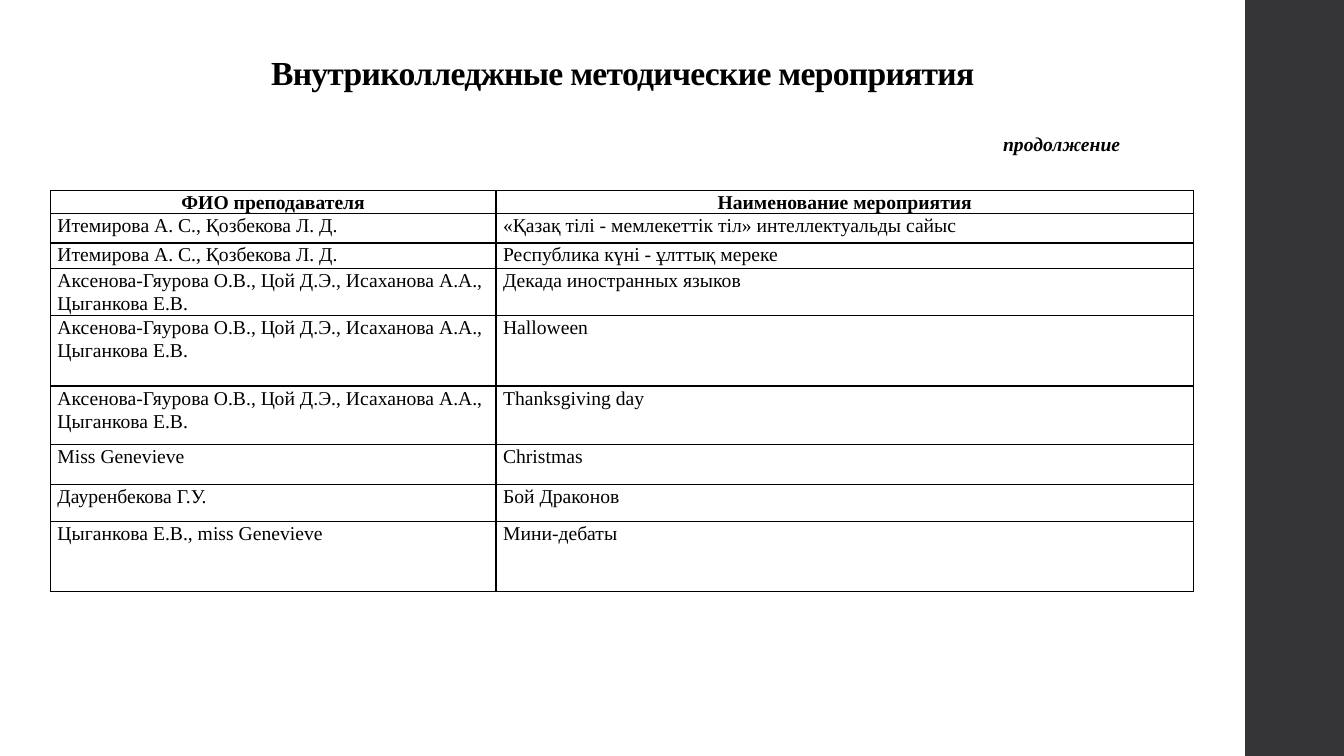
"""Builds the slide listing the college's methodical events and their teachers."""
from dataclasses import dataclass

from lxml import etree
from pptx import Presentation
from pptx.dml.color import RGBColor
from pptx.enum.shapes import MSO_SHAPE
from pptx.enum.text import MSO_ANCHOR, MSO_AUTO_SIZE, PP_ALIGN
from pptx.oxml.ns import qn
from pptx.slide import Slide
from pptx.table import _Cell
from pptx.text.text import TextFrame
from pptx.util import Inches, Pt

RECTANGLE = MSO_SHAPE.RECTANGLE
BOTTOM = MSO_ANCHOR.BOTTOM
GROW = MSO_AUTO_SIZE.SHAPE_TO_FIT_TEXT
NO_FIT = MSO_AUTO_SIZE.NONE
LEFT, CENTER = PP_ALIGN.LEFT, PP_ALIGN.CENTER


@dataclass(frozen=True)
class Theme:
    font: str = "Times New Roman"
    ink: RGBColor = RGBColor(0, 0, 0)
    paper: RGBColor = RGBColor(255, 255, 255)
    band: RGBColor = RGBColor(0x35, 0x35, 0x37)
    title_size: int = 24
    body_size: int = 14
    border: int = 1


@dataclass(frozen=True)
class Area:
    left: float
    top: float
    width: float
    height: float

    def lengths(self) -> list[Inches]:
        return [Inches(v) for v in (self.left, self.top, self.width, self.height)]


@dataclass(frozen=True)
class TextStyle:
    size: int
    bold: bool = False
    italic: bool = False
    align: PP_ALIGN = LEFT
    line_spacing: float = 1.0
    after: int = 0
    tracking: int = 0


@dataclass(frozen=True)
class Event:
    teachers: str
    name: str
    height: float
    name_after: int = 8


THEME = Theme()
TITLE = TextStyle(THEME.title_size, bold=True, align=CENTER, line_spacing=0.9, tracking=-50)
NOTE = TextStyle(THEME.body_size, bold=True, italic=True)
HEADER = TextStyle(THEME.body_size, bold=True, align=CENTER, line_spacing=1.07, after=8)

STATE_LANGUAGE = "Итемирова А. С., Қозбекова Л. Д."
FOREIGN_LANGUAGES = "Аксенова-Гяурова О.В., Цой Д.Э., Исаханова А.А., Цыганкова Е.В."
HEADINGS = Event("ФИО преподавателя", "Наименование мероприятия", 0.23)
EVENTS = [
    Event(STATE_LANGUAGE, "«Қазақ тілі - мемлекеттік тіл» интеллектуальды сайыс", 0.29, 12),
    Event(STATE_LANGUAGE, "Республика күні - ұлттық мереке", 0.25, 12),
    Event(FOREIGN_LANGUAGES, "Декада иностранных языков", 0.47),
    Event(FOREIGN_LANGUAGES, "Halloween", 0.7),
    Event(FOREIGN_LANGUAGES, "Thanksgiving day", 0.58),
    Event("Miss Genevieve", "Christmas", 0.4),
    Event("Дауренбекова Г.У.", "Бой Драконов", 0.36),
    Event("Цыганкова Е.В., miss Genevieve", "Мини-дебаты", 0.7),
]
COLUMN_WIDTHS = (4.42, 6.92)


def write_text(frame: TextFrame, text: str, style: TextStyle) -> None:
    para = frame.paragraphs[0]
    para_format = {
        "alignment": style.align,
        "line_spacing": style.line_spacing,
        "space_after": Pt(style.after),
    }
    for name, value in para_format.items():
        setattr(para, name, value)
    span = para.add_run()
    span.text = text
    span_format = {
        "name": THEME.font,
        "size": Pt(style.size),
        "bold": style.bold,
        "italic": style.italic,
    }
    for name, value in span_format.items():
        setattr(span.font, name, value)
    span.font.color.rgb = THEME.ink
    if style.tracking:
        span._r.get_or_add_rPr().set("spc", str(style.tracking))


def add_text(page: Slide, area: Area, text: str, style: TextStyle, frame_format: dict) -> None:
    frame = page.shapes.add_textbox(*area.lengths()).text_frame
    for name, value in frame_format.items():
        setattr(frame, name, value)
    write_text(frame, text, style)


def add_band(page: Slide, area: Area) -> None:
    band = page.shapes.add_shape(RECTANGLE, *area.lengths())
    band.shadow.inherit = False
    band.fill.solid()
    band.fill.fore_color.rgb = THEME.band
    band.line.fill.background()


def format_cell(cell: _Cell, text: str, style: TextStyle, inset: float) -> None:
    properties = cell._tc.get_or_add_tcPr()
    for side in ("a:lnL", "a:lnR", "a:lnT", "a:lnB"):
        line = etree.SubElement(properties, qn(side), w=str(Pt(THEME.border)))
        fill = etree.SubElement(line, qn("a:solidFill"))
        etree.SubElement(fill, qn("a:srgbClr"), val=str(THEME.ink))
    cell.fill.solid()
    cell.fill.fore_color.rgb = THEME.paper
    margins = {"margin_left": inset, "margin_right": inset, "margin_top": 0, "margin_bottom": 0}
    for name, value in margins.items():
        setattr(cell, name, Inches(value))
    write_text(cell.text_frame, text, style)


def add_events(page: Slide, left: float, top: float) -> None:
    rows = [HEADINGS, *EVENTS]
    area = Area(left, top, sum(COLUMN_WIDTHS), sum(row.height for row in rows))
    table = page.shapes.add_table(len(rows), len(COLUMN_WIDTHS), *area.lengths()).table
    table.first_row = table.horz_banding = False
    for column, width in zip(table.columns, COLUMN_WIDTHS):
        column.width = Inches(width)
    for index, event in enumerate(rows):
        table.rows[index].height = Inches(event.height)
        entries = ((event.teachers, 12), (event.name, event.name_after))
        for column, (text, after) in enumerate(entries):
            body = TextStyle(THEME.body_size, line_spacing=1.07, after=after)
            style, inset = (body, 0.07) if index else (HEADER, 0.06)
            format_cell(table.cell(index, column), text, style, inset)


def main() -> None:
    deck = Presentation()
    deck.slide_width, deck.slide_height = Inches(13.33), Inches(7.5)
    page = deck.slides.add_slide(deck.slide_layouts[6])
    page.background.fill.solid()
    page.background.fill.fore_color.rgb = THEME.paper
    add_band(page, Area(12.35, 0, 1, 7.5))
    add_text(page, Area(0.52, 0.49, 11.31, 0.48), "Внутриколледжные методические мероприятия",
             TITLE, {"word_wrap": True, "vertical_anchor": BOTTOM, "auto_size": NO_FIT})
    add_events(page, 0.5, 1.89)
    add_text(page, Area(9.85, 1.26, 1.52, 0.34), "продолжение",
             NOTE, {"word_wrap": True, "auto_size": GROW})
    deck.save("out.pptx")


if __name__ == "__main__":
    main()
